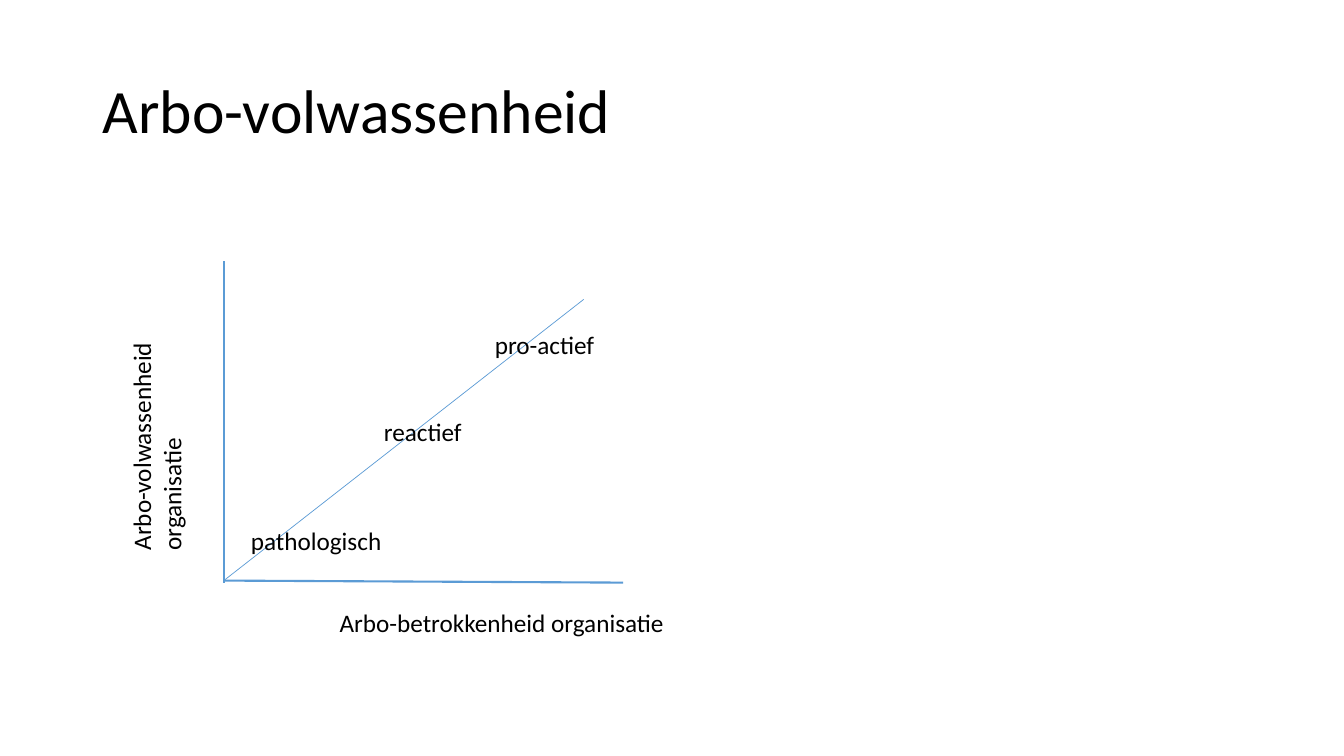
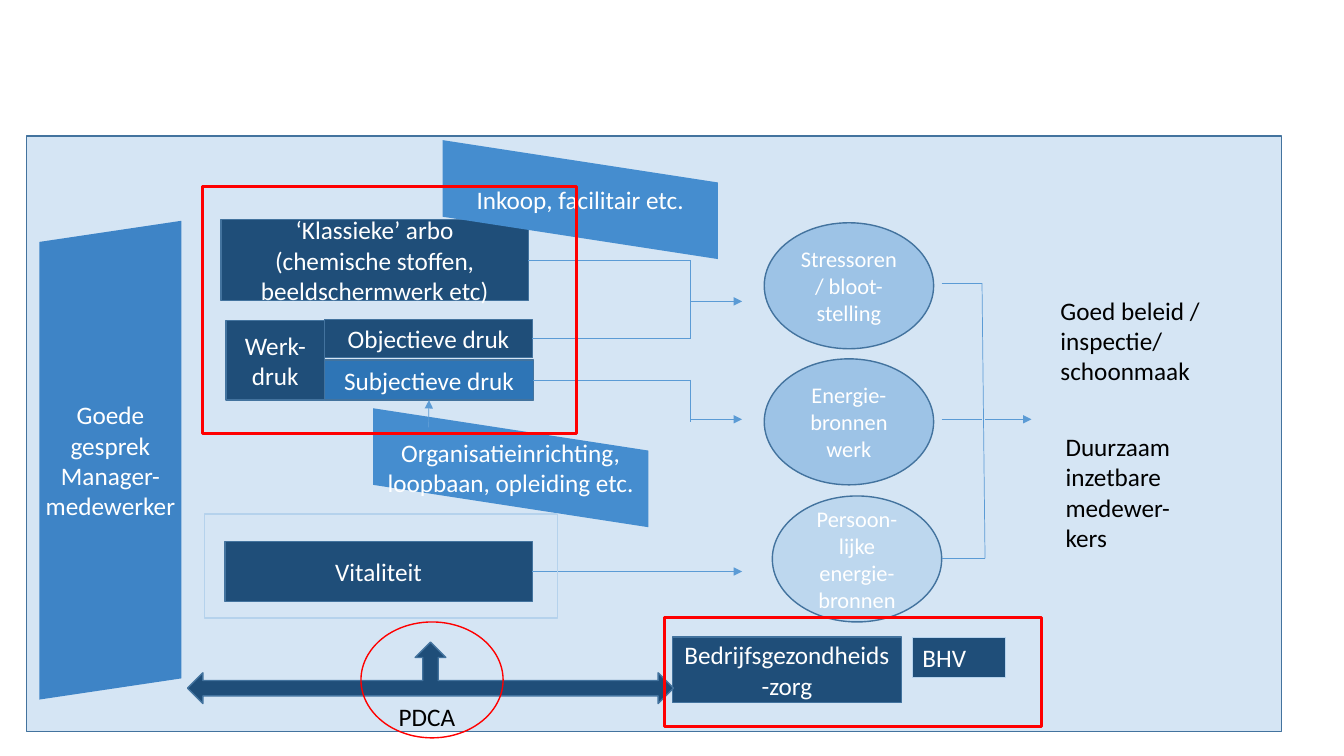
from lxml.etree import SubElement
from pptx import Presentation
from pptx.dml.color import RGBColor
from pptx.enum.shapes import MSO_CONNECTOR, MSO_SHAPE
from pptx.enum.text import MSO_ANCHOR, PP_ALIGN
from pptx.oxml.ns import qn
from pptx.util import Inches, Pt

FONT = "Calibri"
BLACK, WHITE, RED = "000000", "FFFFFF", "FF0000"
NAVY, EDGE, ACCENT, PALE = "1F4E79", "43739E", "5B9BD5", "B5D2EC"
SKY, ICE = "9DC3E6", "BDD7EE"
TOP, LEFT, BOTTOM, RIGHT = range(4)
CELLS_PER_INCH = 10


def grid(*cells):
    return [Inches(cell / CELLS_PER_INCH) for cell in cells]


def paint(color_format, value):
    color_format.rgb = RGBColor.from_string(value)


def fill_with(shape, color, alpha=None):
    if color is None:
        shape.fill.background()
        return
    shape.fill.solid()
    paint(shape.fill.fore_color, color)
    if alpha is not None:
        tint = shape.fill._xPr.find(qn("a:solidFill"))[0]
        SubElement(tint, qn("a:alpha"), val=str(alpha * 1000))


def outline(shape, color, width):
    if color is None:
        shape.line.fill.background()
        return
    paint(shape.line.color, color)
    shape.line.width = Pt(width)


def write(shape, paragraphs, size=18, color=BLACK, align=PP_ALIGN.LEFT,
          anchor=MSO_ANCHOR.TOP, spacing=None):
    frame = shape.text_frame
    frame.word_wrap = True
    frame.vertical_anchor = anchor
    for index, words in enumerate(paragraphs):
        paragraph = frame.add_paragraph() if index else frame.paragraphs[0]
        paragraph.alignment = align
        paragraph.line_spacing = spacing
        run = paragraph.add_run()
        run.text = words
        run.font.name = FONT
        run.font.size = Pt(size)
        paint(run.font.color, color)


def add_label(slide, area, words, **style):
    label = slide.shapes.add_textbox(*grid(*area))
    write(label, [words], **style)
    return label


def add_block(slide, area, *paragraphs, kind=MSO_SHAPE.RECTANGLE, fill=NAVY,
              edge=EDGE, width=1, alpha=None, size=18,
              align=PP_ALIGN.CENTER, anchor=MSO_ANCHOR.MIDDLE):
    block = slide.shapes.add_shape(kind, *grid(*area))
    block.shadow.inherit = False
    fill_with(block, fill, alpha)
    outline(block, edge, width)
    if paragraphs:
        write(block, paragraphs, size, WHITE, align, anchor)
    return block


def add_slanted(slide, area, slope, fill, *paragraphs):
    left, top, width, height = area
    right, bottom = left + width, top + height
    fall, rise = max(slope, 0), max(-slope, 0)
    corners = [(left, top + rise), (right, top + fall),
               (right, bottom - rise), (left, bottom - fall)]
    points = [tuple(grid(*corner)) for corner in corners]
    builder = slide.shapes.build_freeform(*points[0])
    builder.add_line_segments(points[1:], close=True)
    panel = builder.convert_to_shape()
    panel.shadow.inherit = False
    fill_with(panel, fill)
    outline(panel, None, 0)
    panel.text_frame.margin_left = panel.text_frame.margin_right = Inches(0.05)
    write(panel, paragraphs, color=WHITE, align=PP_ALIGN.CENTER,
          anchor=MSO_ANCHOR.MIDDLE)


def add_line(slide, start, end, width=0.5, arrow=False, source=None, target=None):
    line = slide.shapes.add_connector(MSO_CONNECTOR.STRAIGHT, *grid(*start, *end))
    outline(line, ACCENT, width)
    if arrow:
        SubElement(line.line._get_or_add_ln(), qn("a:tailEnd"), type="triangle")
    SubElement(line._element.spPr, qn("a:effectLst"))
    if source:
        line.begin_connect(*source)
    if target:
        line.end_connect(*target)


def build_maturity(slide):
    add_label(slide, (9.2, 4, 115, 14.5), "Arbo-volwassenheid", size=44,
              anchor=MSO_ANCHOR.MIDDLE, spacing=0.9)
    origin = (22.2, 57.6)
    add_line(slide, (22.2, 25.9), (22.2, 57.8), width=1.5)
    add_line(slide, origin, (61.8, 57.8), width=1.5)
    add_line(slide, origin, (57.9, 29.7))
    growth_axis = add_label(slide, (12, 26.7, 8.1, 28.9),
                            "Arbo-volwassenheid organisatie")
    growth_axis.text_frame._txBody.bodyPr.set("vert", "vert270")
    for left, top, width, words in [
            (32.7, 59.8, 36.4, "Arbo-betrokkenheid organisatie"),
            (23.9, 51.6, 24.4, "pathologisch"),
            (37.1, 40.8, 17.5, "reactief"),
            (48.1, 32.2, 19.6, "pro-actief")]:
        add_label(slide, (left, top, width, 4), words)


def add_flows(slide, classic, objective, subjective, vitality):
    join, tip = 68.5, 73.6
    for block, height in [(classic, 25.8), (objective, 33.6), (subjective, 37.7)]:
        add_line(slide, (52.8, height), (join, height), source=(block, RIGHT))
    for top, bottom, exit_height in [(25.8, 33.6, 29.9), (37.7, 41.9, 41.6)]:
        add_line(slide, (join, top), (join, bottom))
        add_line(slide, (join, exit_height), (tip, exit_height), arrow=True)
    add_line(slide, (52.8, 56.7), (tip, 56.7), arrow=True, source=(vitality, RIGHT))
    add_line(slide, (42.5, 42.4), (42.6, 39.7), arrow=True,
             target=(subjective, BOTTOM))

    for height, reach in [(28.1, 97.4), (41.6, 97.4), (55.4, 97.7)]:
        add_line(slide, (93.4, height), (reach, height))
    add_line(slide, (97.4, 28.1), (97.7, 55.4))
    add_line(slide, (97.7, 41.6), (102.3, 41.6), arrow=True)


def build_policy(slide):
    add_block(slide, (2.6, 13.5, 124.5, 59.1), fill=ACCENT, alpha=25)
    add_slanted(slide, (37, 40.5, 27.3, 11.8), 4.2, "458DCF",
                "Organisatieinrichting, loopbaan, opleiding etc.")
    subjective = add_block(slide, (32.2, 35.7, 20.7, 4), "Subjectieve druk",
                           fill="2E75B6")
    classic = add_block(slide, (21.9, 21.8, 30.5, 8), "‘Klassieke’ arbo",
                        "(chemische stoffen, beeldschermwerk etc)")
    for left, top, fill, words in [
            (75.8, 35.6, SKY, "Energie-bronnen werk"),
            (75.8, 22.1, SKY, "Stressoren / bloot-stelling"),
            (76.6, 49.2, ICE, "Persoon-lijke energie-bronnen")]:
        add_block(slide, (left, top, 16.8, 12.5), words, kind=MSO_SHAPE.OVAL,
                  fill=fill, size=16)
    add_slanted(slide, (3.9, 21.9, 14.1, 47.5), -2.1, "3E84C6",
                "Goede gesprek", "Manager-medewerker")
    add_block(slide, (66.7, 63.2, 22.7, 6.5), "Bedrijfsgezondheids-zorg")
    objective = add_block(slide, (32.2, 31.7, 20.6, 3.8), "Objectieve druk")
    add_block(slide, (22.4, 31.8, 9.8, 7.9), "Werk-druk")
    vitality = add_block(slide, (22.3, 53.7, 30.5, 6), "Vitaliteit")
    add_block(slide, (18.6, 63.7, 48.2, 6.1), kind=MSO_SHAPE.LEFT_RIGHT_UP_ARROW)
    add_flows(slide, classic, objective, subjective, vitality)
    add_label(slide, (104.2, 28.8, 16, 10.1), "Goed beleid / inspectie/ schoonmaak")
    add_label(slide, (104.7, 42.3, 13.4, 13.1), "Duurzaam inzetbare medewer-kers")
    add_block(slide, (90.5, 63.2, 9.2, 4), "BHV", edge=PALE, width=0.75,
              align=PP_ALIGN.LEFT, anchor=MSO_ANCHOR.TOP)
    add_block(slide, (20.3, 51, 35, 10.3), fill=None, edge=PALE)
    add_label(slide, (35.2, 69.1, 14.3, 4), "PDCA", align=PP_ALIGN.CENTER)
    add_slanted(slide, (43.9, 13.9, 27.3, 11.8), 4.2, "458DCF",
                "Inkoop, facilitair etc.")
    for frame in [(65.9, 61.3, 37.4, 10.8), (20.1, 18.5, 37.1, 24.5)]:
        add_block(slide, frame, fill=None, edge=RED, width=2)
    add_block(slide, (35.8, 61.7, 14.1, 11.5), kind=MSO_SHAPE.OVAL,
              fill=None, edge=RED)


def main():
    deck = Presentation()
    deck.slide_width, deck.slide_height = Inches(13.33), Inches(7.5)
    for build in (build_maturity, build_policy):
        build(deck.slides.add_slide(deck.slide_layouts[6]))
    deck.save("out.pptx")


if __name__ == "__main__":
    main()
